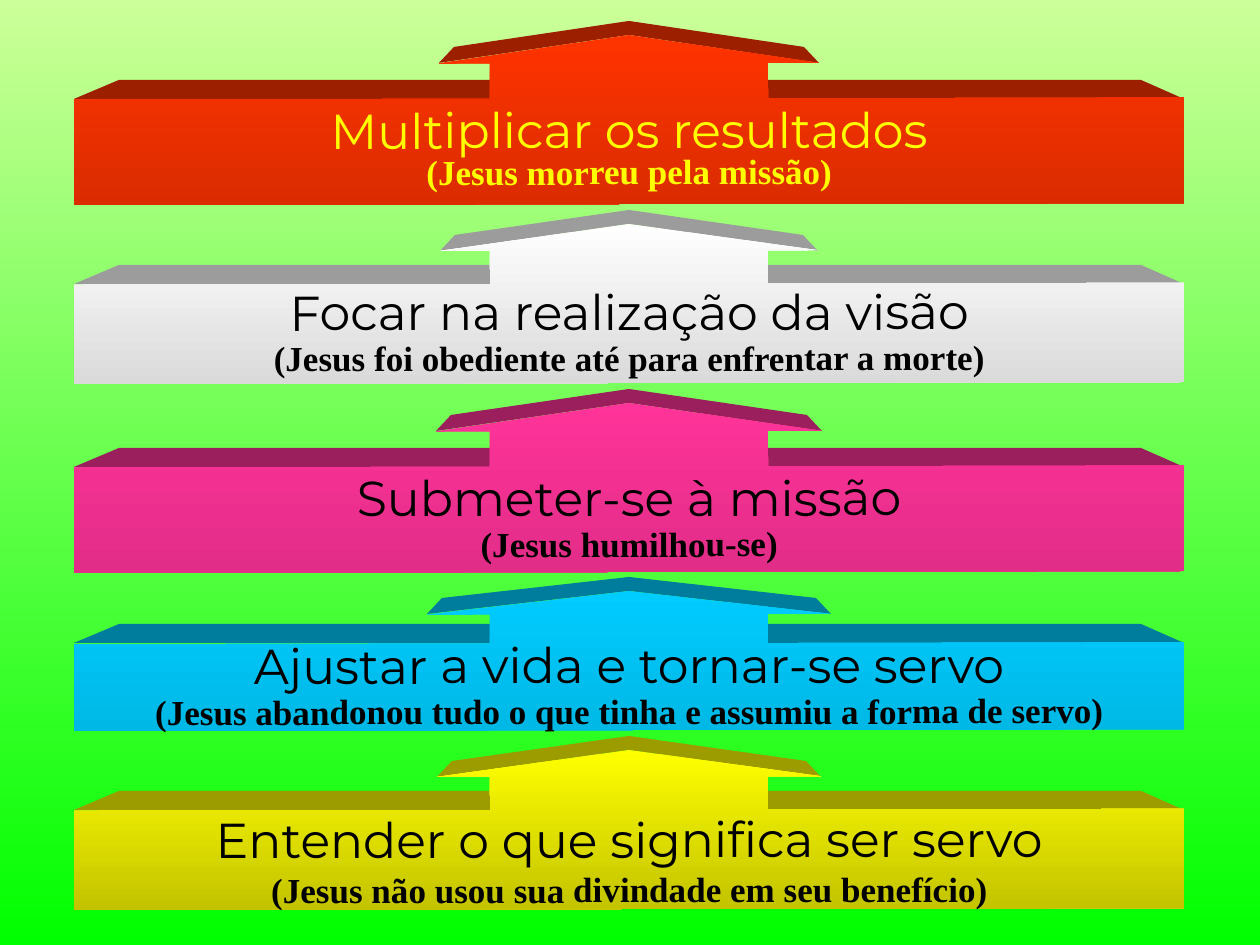
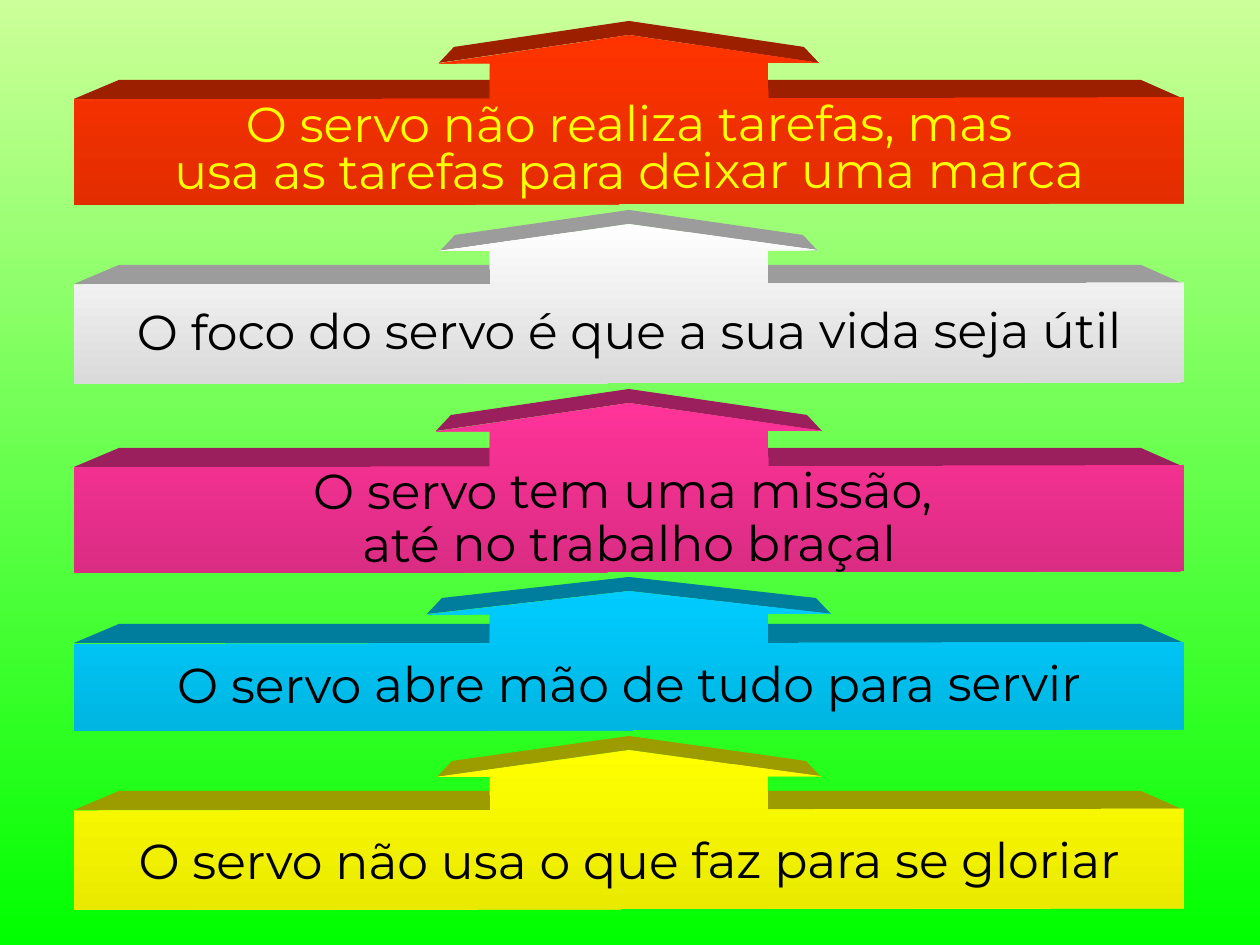
from pptx import Presentation
from pptx import util as u
from pptx.dml.color import RGBColor
from pptx.enum import shapes, text

SCALE = 914400 / 126  # EMU in one px
WIDE, HIGH = 1260, 945
LEFT, SPAN = 74, 1110
MID = LEFT + SPAN // 2
SHAFT = 278
TIP, BOX = 0.167, 0.624  # parts of the height

INK = {
    "sky": "CCFF99", "grass": "00FF00",
    "yellow": "FFFF00", "blue": "00CCFF", "pink": "FF3399",
    "white": "FFFFFF", "red": "FF3300", "black": "000000",
}
# colour: top, height, half width of head, line spacing, text colour
BANDS = {
    "yellow": (750, 159, 192, 1.0, "black"),
    "blue": (591, 139, 202, 0.9, "black"),
    "pink": (403, 169, 193, 0.9, "black"),
    "white": (224, 159, 189, 0.9, "black"),
    "red": (35, 169, 190, 0.8, "yellow"),
}
TITLE = ("Montserrat", 28, False)
NOTE = ("Times New Roman", 20, True)

# Each slide: style of the second line, then colour: (gradient end, lines)
SLIDES = [
    (NOTE, {
        "yellow": ("C3C300", ["Entender o que significa ser servo",
                              "(Jesus não usou sua divindade em seu benefício)"]),
        "blue": ("00B8E6", ["Ajustar a vida e tornar-se servo",
                            "(Jesus abandonou tudo o que tinha e assumiu a forma de servo)"]),
        "pink": ("E22D88", ["Submeter-se à missão", "(Jesus humilhou-se)"]),
        "white": ("DADADA", ["Focar na realização da visão",
                             "(Jesus foi obediente até para enfrentar a morte)"]),
        "red": ("DA2C00", ["Multiplicar os resultados", "(Jesus morreu pela missão)"]),
    }),
    (TITLE, {
        "yellow": ("EAEA00", ["O servo não usa o que faz para se gloriar"]),
        "blue": ("00B5E2", ["O servo abre mão de tudo para servir"]),
        "pink": ("DA2C83", ["O servo tem uma missão, ", "até no trabalho braçal"]),
        "white": ("DADADA", ["O foco do servo é que a sua vida seja útil"]),
        "red": ("E22D00", ["O servo não realiza tarefas, mas",
                           "usa as tarefas para deixar uma marca"]),
    }),
]


def px(n):
    return u.Emu(round(n * SCALE))


def rgb(code):
    return RGBColor.from_string(code)


def dim(code, part=0.61):
    return RGBColor(*(round(c * part) for c in rgb(code)))


def fade(fill, first, last):
    """Fill from top to bottom."""
    fill.gradient()
    fill.gradient_angle = 270
    for stop, code in zip(fill.gradient_stops, (first, last)):
        stop.color.rgb = rgb(code)


def add_depth(slide, name):
    """Dark upper faces of the arrow head and of the box."""
    top, high, half, _, _ = BANDS[name]
    brim = top + high * TIP
    edge = top + high * (1 - BOX)
    right = LEFT + SPAN
    head = [(MID - half, brim), (MID - half + 15, brim - 16), (MID, top - 14),
            (MID + half - 15, brim - 16), (MID + half, brim), (MID, top)]
    lid = [(LEFT, edge), (LEFT + 45, edge - 19),
           (right - 43, edge - 19), (right, edge)]
    path = slide.shapes.build_freeform(*head[0], scale=SCALE)
    path.add_line_segments(head[1:])
    path.move_to(*lid[0])
    path.add_line_segments(lid[1:])
    face = path.convert_to_shape()
    face.shadow.inherit = False
    face.fill.solid()
    face.fill.fore_color.rgb = dim(INK[name])
    face.line.fill.background()


def add_arrow(slide, name, end):
    top, high, half, _, _ = BANDS[name]
    arrow = slide.shapes.add_shape(shapes.MSO_SHAPE.DOWN_ARROW_CALLOUT,
                                   px(LEFT), px(top), px(SPAN), px(high))
    for i, part in enumerate((SHAFT / high, half / high, TIP, BOX)):
        arrow.adjustments[i] = part
    arrow.rotation = 179.9
    arrow.shadow.inherit = False
    arrow.line.fill.background()
    fade(arrow.fill, INK[name], end)
    # Keep the gradient upright while the arrow is turned
    arrow._element.spPr.find("{*}gradFill").set("rotWithShape", "0")
    return arrow


def write(arrow, name, lines, styles):
    _, _, _, gap, ink = BANDS[name]
    frame = arrow.text_frame
    frame.word_wrap = False
    frame.vertical_anchor = text.MSO_ANCHOR.MIDDLE
    frame._txBody.bodyPr.set("rot", "10800000")  # turn the text upright
    frame.text = "\n".join(lines)
    for para, (face, size, bold) in zip(frame.paragraphs, styles):
        para.alignment = text.PP_ALIGN.CENTER
        para.line_spacing = gap
        font = para.font
        font.name, font.size, font.bold = face, u.Pt(size), bold
        font.color.rgb = rgb(INK[ink])


def main():
    deck = Presentation()
    deck.slide_width, deck.slide_height = px(WIDE), px(HIGH)
    for second, bands in SLIDES:
        slide = deck.slides.add_slide(deck.slide_layouts[6])
        fade(slide.background.fill, INK["sky"], INK["grass"])
        # Bands from the bottom up
        for name, (end, lines) in bands.items():
            add_depth(slide, name)
            arrow = add_arrow(slide, name, end)
            write(arrow, name, lines, (TITLE, second))
    deck.save("out.pptx")


if __name__ == "__main__":
    main()
